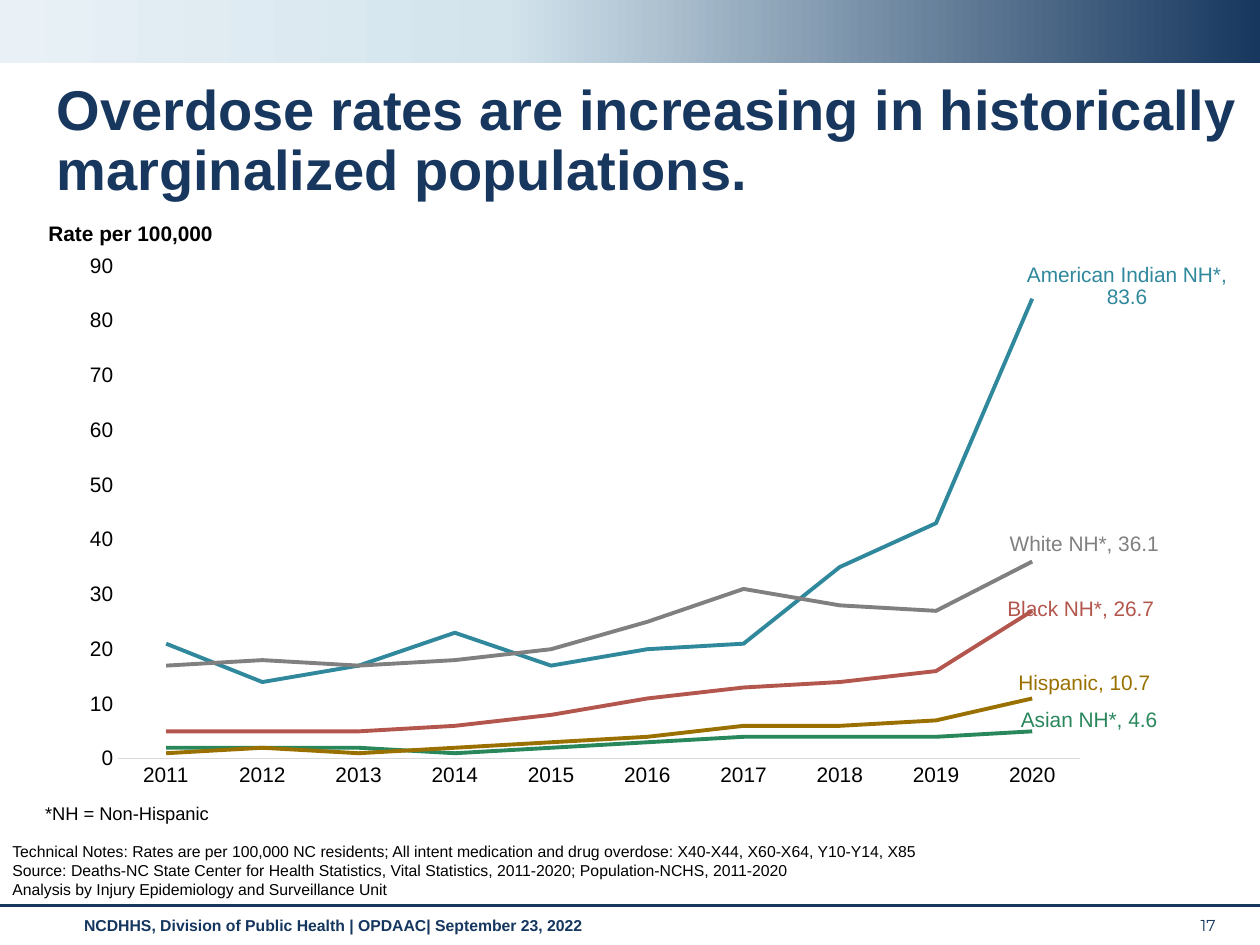
from copy import deepcopy

from lxml.etree import SubElement
from pptx import Presentation
from pptx.chart.data import CategoryChartData
from pptx.dml.color import RGBColor
from pptx.enum.chart import (
    XL_CHART_TYPE, XL_LABEL_POSITION, XL_MARKER_STYLE, XL_TICK_MARK)
from pptx.enum.shapes import MSO_CONNECTOR, MSO_SHAPE
from pptx.oxml.ns import qn
from pptx.util import Pt

NAVY = "17375E"
FOOTER_BLUE = "15365E"
BLACK = "000000"
YEARS = [str(year) for year in range(2011, 2021)]

# name, colour, rates per year, exact last rate, shift of its label in percent
RATES = [
    ("American Indian NH*", "30889C",
     [21, 14, 17, 23, 17, 20, 21, 35, 43, 84], 83.6, (8, 2.4)),
    ("Asian NH*", "29875C", [2, 2, 2, 1, 2, 3, 4, 4, 4, 5], 4.6, (4.8, 0.8)),
    ("Black NH*", "B3564D", [5, 5, 5, 6, 8, 11, 13, 14, 16, 27], 26.7, (4.1, 2.3)),
    ("Hispanic", "9A7100", [1, 2, 1, 2, 3, 4, 6, 6, 7, 11], 10.7, (4.4, 0.2)),
    ("White NH*", "808080",
     [17, 18, 17, 18, 20, 25, 31, 28, 27, 36], 36.1, (4.4, -0.2)),
]
NOTES = [
    "Technical Notes: Rates are per 100,000 NC residents; All intent medication "
    "and drug overdose: X40-X44, X60-X64, Y10-Y14, X85",
    "Source: Deaths-NC State Center for Health Statistics, Vital Statistics, "
    "2011-2020; Population-NCHS, 2011-2020",
    "Analysis by Injury Epidemiology and Surveillance Unit",
]


def rgb(hex_colour):
    return RGBColor.from_string(hex_colour)


def set_font(font, size, colour=BLACK, bold=False, name="Arial"):
    font.name, font.size, font.bold = name, Pt(size), bold
    font.color.rgb = rgb(colour)


def write(frame, lines, spacing=1.0, before=0, **style):
    """Fill a text frame with one paragraph per line, all in the same style."""
    for number, line in enumerate(lines):
        paragraph = frame.add_paragraph() if number else frame.paragraphs[0]
        paragraph.line_spacing = spacing
        paragraph.space_before = Pt(before if number else 0)
        run = paragraph.add_run()
        run.text = line
        set_font(run.font, **style)


def place(element, index, modes=None, **percents):
    """Give a chart element a manual layout as its child number index."""
    for old in element.findall(qn("c:layout")):
        element.remove(old)
    layout = element.makeelement(qn("c:layout"))
    manual = SubElement(layout, qn("c:manualLayout"))
    fractions = {tag: round(value / 100, 4) for tag, value in percents.items()}
    for tag, value in {**(modes or {}), **fractions}.items():
        SubElement(manual, qn(f"c:{tag}")).set("val", str(value))
    element.insert(index, layout)


class RateSlide:
    def __init__(self, presentation):
        self.slide = presentation.slides.add_slide(presentation.slide_layouts[6])
        self.shapes = self.slide.shapes

    def text(self, box, *lines, **style):
        frame = self.shapes.add_textbox(*map(Pt, box)).text_frame
        frame.word_wrap = True
        write(frame, lines, **style)

    def gradient_band(self, box, stops):
        band = self.shapes.add_shape(MSO_SHAPE.RECTANGLE, *map(Pt, box))
        band.shadow.inherit = False
        band.line.fill.background()
        band.fill.gradient()
        band.fill.gradient_angle = 180
        stop_list = next(band._element.iter(qn("a:gsLst")))
        while len(stop_list) < len(stops):
            stop_list.append(deepcopy(stop_list[0]))
        for stop, (position, colour) in zip(band.fill.gradient_stops, stops):
            stop.position = position
            stop.color.rgb = rgb(colour)

    def rule(self, y, colour, width):
        rule = self.shapes.add_connector(
            MSO_CONNECTOR.STRAIGHT, 0, Pt(y), Pt(720), Pt(y))
        rule.line.color.rgb = rgb(colour)
        rule.line.width = Pt(width)
        SubElement(rule._element.spPr, qn("a:effectLst"))

    def line_chart(self, box):
        data = CategoryChartData(number_format="#,##0")
        data.categories = YEARS
        for name, _, rates, *_ in RATES:
            data.add_series(name, rates)
        chart = self.shapes.add_chart(
            XL_CHART_TYPE.LINE, *map(Pt, box), data).chart
        chart.has_legend = chart.has_title = False
        set_font(chart.font, 10)
        self.style_axes(chart)
        plot = chart.plots[0]
        plot.vary_by_categories = False
        for series, rate in zip(plot.series, RATES):
            self.style_series(series, *rate)
        place(chart._chartSpace.chart.plotArea, 0,
              {"layoutTarget": "inner", "xMode": "edge", "yMode": "edge"},
              x=7.2, y=8.4, w=81.2, h=80)

    def style_axes(self, chart):
        years, values = chart.category_axis, chart.value_axis
        for axis in (years, values):
            axis.major_tick_mark = axis.minor_tick_mark = XL_TICK_MARK.NONE
            axis.has_major_gridlines = False
            set_font(axis.tick_labels.font, 12)
        years.format.line.color.rgb = rgb("D9D9D9")
        years.format.line.width = Pt(0.75)
        values.format.line.fill.background()
        values.minimum_scale, values.maximum_scale, values.major_unit = 0, 90, 10
        values.tick_labels.number_format = "#,##0"
        values.tick_labels.number_format_is_linked = False
        heading = values.axis_title
        write(heading.text_frame, ["Rate per 100,000"], size=12, bold=True)
        body = heading.text_frame._txBody.find(qn("a:bodyPr"))
        body.set("rot", "0")
        body.set("vert", "horz")
        place(heading._element, 1, {"xMode": "edge", "yMode": "edge"}, x=1, y=0.4)

    def style_series(self, series, name, colour, rates, last_rate, shift):
        series.smooth = False
        series.marker.style = XL_MARKER_STYLE.NONE
        series.format.line.color.rgb = rgb(colour)
        series.format.line.width = Pt(2.25)
        series.data_labels.show_value = False
        label = series.points[len(rates) - 1].data_label
        write(label.text_frame, [f"{name}, {last_rate}"], size=12, colour=colour)
        label.position = XL_LABEL_POSITION.ABOVE
        dx, dy = shift
        place(next(series._element.iter(qn("c:dLbl"))), 1, x=dx, y=dy)


def main():
    presentation = Presentation()
    presentation.slide_width, presentation.slide_height = Pt(720), Pt(540)
    page = RateSlide(presentation)
    page.text((41, 519.8, 629, 21),
              "NCDHHS, Division of Public Health | OPDAAC| September 23, 2022",
              size=9, colour=FOOTER_BLUE, bold=True)
    page.text((679, 519.8, 32, 21), "17",
              size=9, colour=FOOTER_BLUE, name="Montserrat")
    page.gradient_band((0, 0, 720, 36),
                       [(0, NAVY), (0.6, "D3E4ED"), (1, "E9F1F6")])
    page.rule(517.5, NAVY, 1.75)
    page.text((25.2, 43.2, 698.4, 43.2),
              "Overdose rates are increasing in historically marginalized populations.",
              spacing=0.9, size=32, colour=NAVY, bold=True)
    page.text((0, 478.8, 698.4, 26), *NOTES, spacing=0.9, before=0.9, size=9)
    page.line_chart((18.7, 122.4, 682.6, 352.1))
    page.text((18.7, 454.6, 111.6, 20.2), "*NH = Non-Hispanic", size=10.5)
    presentation.save("out.pptx")


if __name__ == "__main__":
    main()
